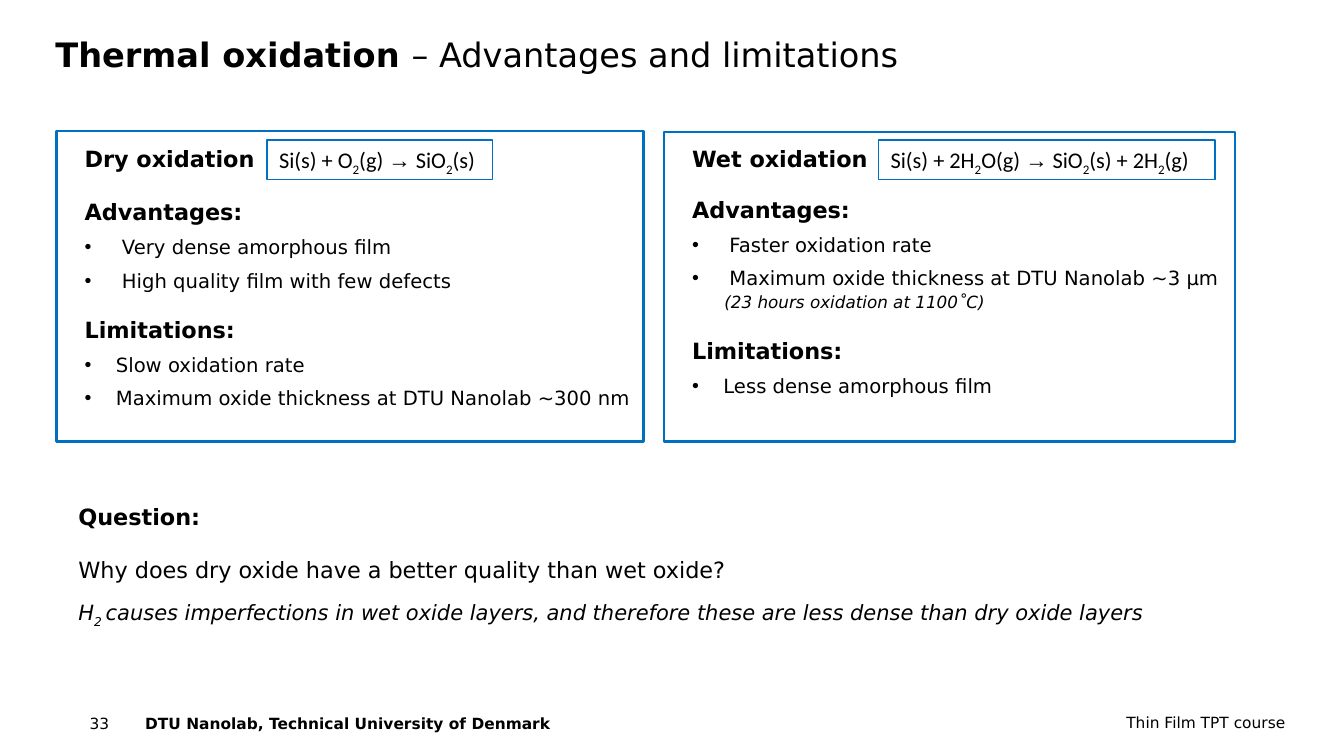
import pptx
import pptx.util
import pptx.dml.color
import pptx.enum.shapes
import pptx.enum.text
import pptx.oxml.xmlchemy

HUES = {"ink": "000000", "edge": "0070C0"}
SUB = "-25000"
inch = pptx.util.Inches
pt = pptx.util.Pt


def hue(name):
    return pptx.dml.color.RGBColor.from_string(HUES[name])


class Deck:
    face = "DejaVu Sans"
    align = pptx.enum.text.PP_ALIGN

    def __init__(self, wide, high):
        self.prs = pptx.Presentation()
        self.prs.slide_width, self.prs.slide_height = inch(wide), inch(high)
        self.slide = self.prs.slides.add_slide(self.prs.slide_layouts[6])

    def fill(self, frame, paras, pad=(0, 0)):
        """Put paragraphs, each a (runs, layout) pair, into a text frame."""
        side, edge = map(inch, pad)
        form = {"word_wrap": True, "margin_left": side, "margin_right": side,
                "margin_top": edge, "margin_bottom": edge,
                "vertical_anchor": pptx.enum.text.MSO_ANCHOR.TOP}
        for key, val in form.items():
            setattr(frame, key, val)
        for num, (runs, lay) in enumerate(paras):
            para = frame.add_paragraph() if num else frame.paragraphs[0]
            self.place(para, **lay)
            for text, form in runs:
                self.letter(para, text, form)

    def place(self, para, gap=0, left=0, bullet=False, align=align.LEFT):
        """Set alignment, space before, indent and bullet of a paragraph."""
        para.alignment = align
        if gap:
            para.space_before = pt(gap)
        props = para._p.get_or_add_pPr()
        props.set("marL", str(inch(left)))
        props.set("indent", str(inch(-left if bullet else 0)))
        if bullet:
            font = pptx.oxml.xmlchemy.OxmlElement("a:buFont")
            font.set("typeface", "Arial")
            mark = pptx.oxml.xmlchemy.OxmlElement("a:buChar")
            mark.set("char", "•")
            props.extend([font, mark])

    def letter(self, para, text, form):
        """Add runs; every second part between bars is a subscript."""
        for num, part in enumerate(text.split("|")):
            run = para.add_run()
            run.text = part
            for key, val in {"name": self.face, **form}.items():
                setattr(run.font, key, val)
            run.font.color.rgb = hue("ink")
            if num % 2:
                run._r.get_or_add_rPr().set("baseline", SUB)

    def text(self, box, paras, pad=(0, 0)):
        shape = self.slide.shapes.add_textbox(*map(inch, box))
        self.fill(shape.text_frame, paras, pad)

    def frame(self, box, line):
        rect = pptx.enum.shapes.MSO_SHAPE.RECTANGLE
        shape = self.slide.shapes.add_shape(rect, *map(inch, box))
        shape.shadow.inherit = False
        shape.fill.background()
        shape.line.color.rgb = hue("edge")
        shape.line.width = pt(line)
        return shape

    def formula(self, box, start, end):
        """Draw a framed reaction with an arrow between its two sides."""
        form = {"size": pt(16), "name": "Calibri"}
        runs = [(start + " ", form), ("→", {**form, "name": "Arial"}),
                (" " + end, form)]
        self.fill(self.frame(box, 1.25).text_frame, [(runs, {})], (0.12, 0.06))


def line(text, size, gap=0, bold=False, italic=False, **lay):
    form = {"size": pt(size), "bold": bold, "italic": italic}
    return [(text, form)], {"gap": gap, **lay}


def head(text, gap=0):
    return line(text, 16, gap, bold=True)


def point(text, left):
    return line(text, 14, 7, left=left, bullet=True)


WIDE, SLIM = 0.37, 0.31
DRY = [
    head("Dry oxidation"),
    head("Advantages:", 19),
    point("Very dense amorphous film", WIDE),
    point("High quality film with few defects", WIDE),
    head("Limitations:", 17),
    point("Slow oxidation rate", SLIM),
    point("Maximum oxide thickness at DTU Nanolab ~300 nm", SLIM),
]
WET = [
    head("Wet oxidation"),
    head("Advantages:", 17),
    point("Faster oxidation rate", WIDE),
    point("Maximum oxide thickness at DTU Nanolab ~3 µm", WIDE),
    line("(23 hours oxidation at 1100˚C)", 12, 2, italic=True, left=0.32),
    head("Limitations:", 17.5),
    point("Less dense amorphous film", SLIM),
]
QUIZ = [
    head("Question:"),
    line("Why does dry oxide have a better quality than wet oxide?", 16, 19),
    line("H|2 |causes imperfections in wet oxide layers, and therefore these "
         "are less dense than dry oxide layers", 15, 12, italic=True),
]


def main():
    deck = Deck(13.34, 7.5)
    deck.text((10.24, 7.07, 2.52, 0.33),
              [line("Thin Film TPT course", 11, align=deck.align.RIGHT)])
    deck.text((0.89, 7.08, 0.44, 0.33), [line("33", 11)])
    deck.text((1.44, 7.08, 5.39, 0.33),
              [line("DTU Nanolab, Technical University of Denmark", 11, bold=True)])
    title = [("Thermal oxidation ", {"size": pt(24), "bold": True}),
             ("– Advantages and limitations", {"size": pt(24)})]
    deck.text((0.55, 0.34, 11.47, 0.5), [(title, {})])
    deck.text((0.72, 1.38, 5.79, 3.25), DRY, (0.12, 0.06))
    deck.text((6.75, 1.38, 5.51, 2.64), WET, (0.12, 0.06))
    deck.text((0.68, 4.94, 11.3, 1.33), QUIZ, (0.1, 0.05))
    deck.frame((0.56, 1.3, 5.83, 3.08), 1.75)
    deck.frame((6.59, 1.31, 5.67, 3.07), 1.75)
    deck.formula((2.65, 1.39, 2.24, 0.39), "Si(s) + O|2|(g)", "SiO|2|(s)")
    deck.formula((8.72, 1.39, 3.34, 0.39),
                 "Si(s) + 2H|2|O(g)", "SiO|2|(s) + 2H|2|(g)")
    deck.prs.save("out.pptx")


if __name__ == "__main__":
    main()
